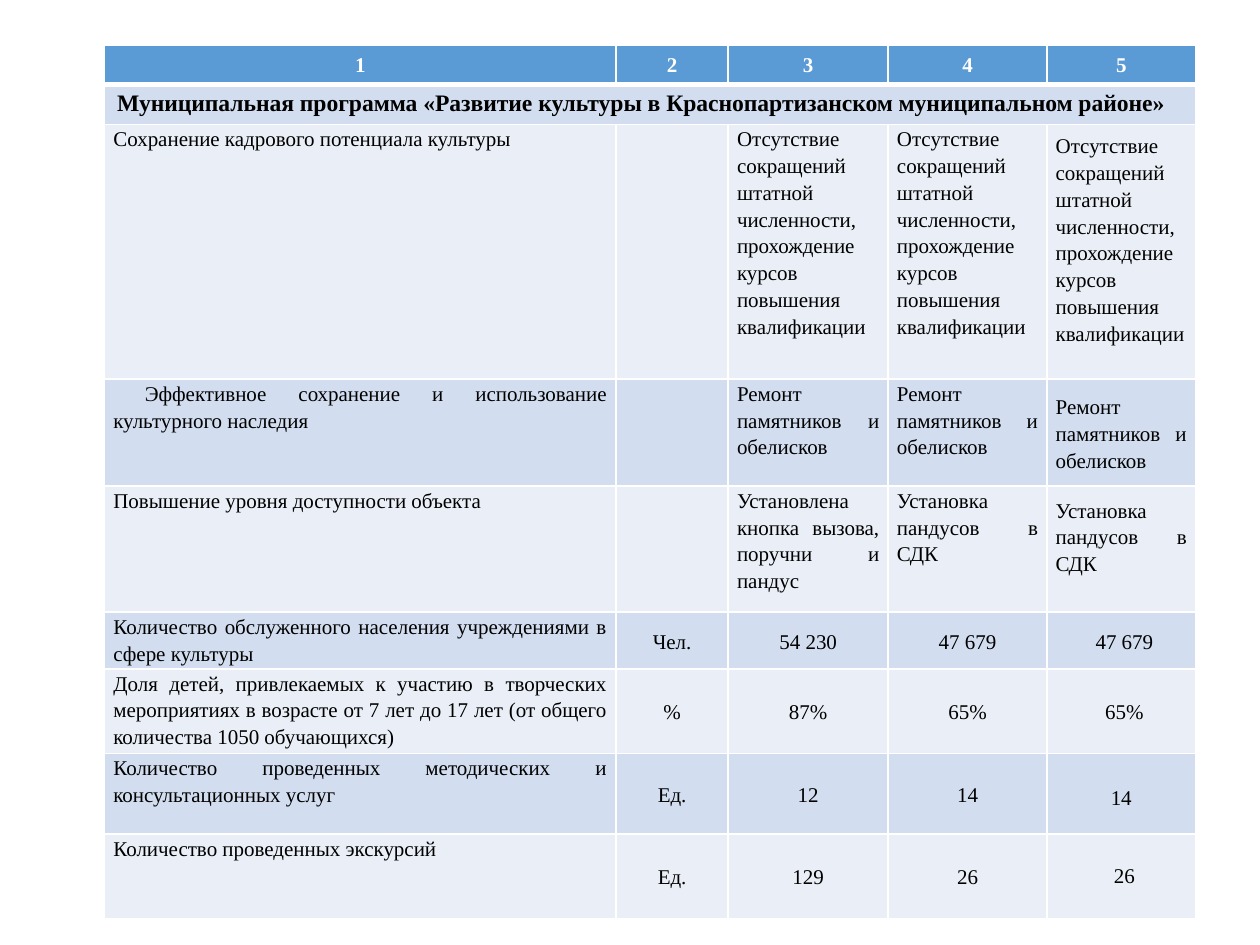
from dataclasses import dataclass

from lxml import etree
from pptx import Presentation
from pptx import util as u
from pptx.dml.color import RGBColor
from pptx.enum import text
from pptx.oxml import ns

LEFT, CENTER, JUSTIFY = (text.PP_ALIGN.LEFT, text.PP_ALIGN.CENTER,
                         text.PP_ALIGN.JUSTIFY)
TOP, MIDDLE = text.MSO_ANCHOR.TOP, text.MSO_ANCHOR.MIDDLE


@dataclass(frozen=True)
class Theme:
    font: str = "Times New Roman"
    header: str = "5B9BD5"
    bands: tuple = ("D2DEEF", "EAEFF7")
    light: str = "FFFFFF"
    dark: str = "000000"
    body_size: float = 12
    section_size: float = 13.5
    rule: float = 1
    header_rule: float = 3


THEME = Theme()


def write(cell, words, size=THEME.body_size, color=THEME.dark, bold=False,
          align=JUSTIFY, anchor=TOP, spacing=1.15, indent=0,
          insets=(0.07, 0, 0.07, 0)):
    """Put formatted text in a cell; insets run left, top, right, bottom."""
    cell.vertical_anchor = anchor
    (cell.margin_left, cell.margin_top,
     cell.margin_right, cell.margin_bottom) = map(u.Inches, insets)
    paragraph = cell.text_frame.paragraphs[0]
    paragraph.alignment = align
    paragraph.line_spacing = spacing
    if indent:
        paragraph._p.get_or_add_pPr().set("indent", str(u.Inches(indent)))
    run = paragraph.add_run()
    run.text = words
    run.font.name = THEME.font
    run.font.size = u.Pt(size)
    run.font.bold = bold
    run.font.color.rgb = RGBColor.from_string(color)


class SlideBuilder:
    def __init__(self, slide, theme):
        self.slide = slide
        self.theme = theme

    def table(self, left, top, widths, heights):
        frame = self.slide.shapes.add_table(
            len(heights), len(widths), u.Inches(left), u.Inches(top),
            u.Inches(sum(widths)), u.Inches(sum(heights)))
        grid = frame.table
        for column, width in zip(grid.columns, widths):
            column.width = u.Inches(width)
        for row, height in zip(grid.rows, heights):
            row.height = u.Inches(height)
        return grid

    def paint(self, cell, fill, bottom):
        """Fill a cell and rule its four sides."""
        cell.fill.solid()
        cell.fill.fore_color.rgb = RGBColor.from_string(fill)
        properties = cell._tc.get_or_add_tcPr()
        rule = self.theme.rule
        sides = {"a:lnL": rule, "a:lnR": rule, "a:lnT": rule, "a:lnB": bottom}
        for place, (side, width) in enumerate(sides.items()):
            line = etree.Element(ns.qn(side), w=str(u.Pt(width)))
            solid = etree.SubElement(line, ns.qn("a:solidFill"))
            etree.SubElement(solid, ns.qn("a:srgbClr"), val=self.theme.light)
            properties.insert(place, line)

    def paint_rows(self, grid):
        for number, row in enumerate(grid.rows):
            for cell in row.cells:
                if number == 0:
                    self.paint(cell, self.theme.header, self.theme.header_rule)
                else:
                    band = self.theme.bands[(number - 1) % 2]
                    self.paint(cell, band, self.theme.rule)


COLUMN_WIDTHS = [4.06, 0.89, 1.27, 1.26, 1.18]
ROW_HEIGHTS = [0.31, 0.32, 2.02, 0.85, 1, 0.45, 0.67, 0.64, 0.67]
SECTION = ("Муниципальная программа «Развитие культуры в "
           "Краснопартизанском муниципальном районе»")
STAFF = ("Отсутствие сокращений штатной численности, прохождение курсов "
         "повышения квалификации")
REPAIR = "Ремонт памятников и обелисков"
RAMPS = "Установка пандусов в СДК"

# Goals described in words: goal, three results, indent of the goal,
# bottom inset of the last result
GOALS = [
    ("Сохранение кадрового потенциала культуры", [STAFF] * 3, 0, 0.21),
    ("Эффективное сохранение и использование культурного наследия",
     [REPAIR] * 3, 0.25, 0),
    ("Повышение уровня доступности объекта",
     ["Установлена кнопка вызова, поручни и пандус", RAMPS, RAMPS], 0, 0.21),
]

# Measured indicators: indicator, unit and values, insets of the last value
INDICATORS = [
    ("Количество обслуженного населения учреждениями в сфере культуры",
     ["Чел.", "54 230", "47 679", "47 679"], (0.12, 0, 0.07, 0)),
    ("Доля детей, привлекаемых к участию в творческих мероприятиях в "
     "возрасте от 7 лет до 17 лет (от общего количества 1050 обучающихся)",
     ["%", "87%", "65%", "65%"], (0.12, 0, 0.07, 0)),
    ("Количество проведенных методических и консультационных услуг",
     ["Ед.", "12", "14", "14"], (0.07, 0.05, 0.07, 0)),
    ("Количество проведенных экскурсий",
     ["Ед.", "129", "26", "26"], (0.12, 0, 0.07, 0.03)),
]


def main():
    deck = Presentation()
    deck.slide_width, deck.slide_height = u.Inches(10), u.Inches(7.5)
    blank = deck.slide_layouts[6]
    builder = SlideBuilder(deck.slides.add_slide(blank), THEME)
    programme = builder.table(0.83, 0.36, COLUMN_WIDTHS, ROW_HEIGHTS)
    builder.paint_rows(programme)

    # Column numbers
    for column in range(len(COLUMN_WIDTHS)):
        write(programme.cell(0, column), str(column + 1), color=THEME.light,
              bold=True, align=CENTER, anchor=MIDDLE, spacing=1.07)

    # Programme name across all columns
    section = programme.cell(1, 0)
    section.merge(programme.cell(1, len(COLUMN_WIDTHS) - 1))
    write(section, SECTION, size=THEME.section_size, bold=True, align=LEFT,
          spacing=1, insets=(0.1, 0.05, 0.1, 0.05))

    # Goals with worded results
    for row, (goal, results, indent, bottom) in enumerate(GOALS, start=2):
        write(programme.cell(row, 0), goal, indent=indent)
        for column, result in enumerate(results[:-1], start=2):
            write(programme.cell(row, column), result)
        write(programme.cell(row, 4), results[-1], anchor=MIDDLE,
              insets=(0.07, 0, 0.07, bottom))

    # Indicators with units and numbers
    first = 2 + len(GOALS)
    for row, (indicator, values, insets) in enumerate(INDICATORS, first):
        write(programme.cell(row, 0), indicator)
        for column, value in enumerate(values[:-1], start=1):
            write(programme.cell(row, column), value, align=CENTER,
                  anchor=MIDDLE)
        write(programme.cell(row, 4), values[-1], align=CENTER,
              anchor=MIDDLE, insets=insets)

    deck.save("out.pptx")


if __name__ == "__main__":
    main()
